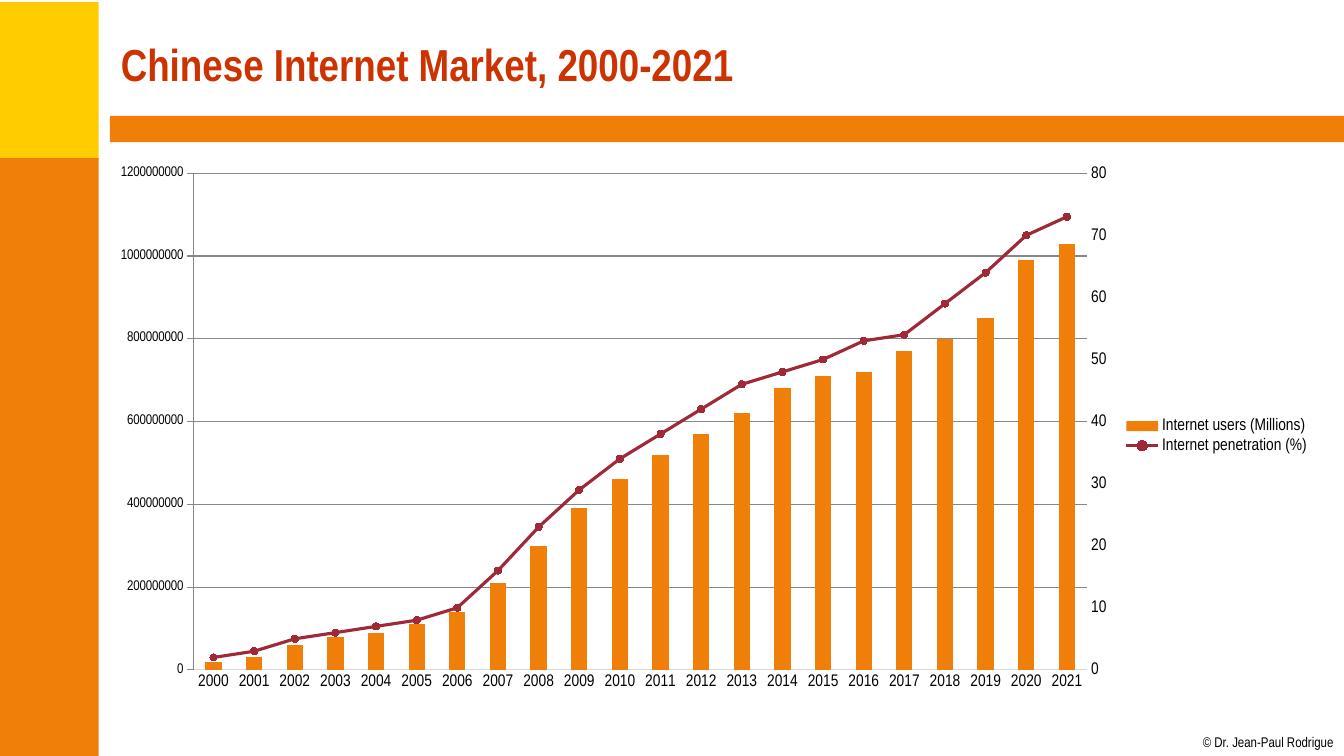
from pptx import Presentation
from pptx.chart.axis import ValueAxis
from pptx.chart.data import CategoryChartData
from pptx.dml.color import RGBColor
from pptx.enum.chart import XL_CHART_TYPE, XL_LEGEND_POSITION, XL_MARKER_STYLE, XL_TICK_MARK
from pptx.enum.shapes import MSO_SHAPE
from pptx.enum.text import MSO_ANCHOR
from pptx.oxml import parse_xml
from pptx.oxml.ns import nsdecls
from pptx.util import Inches, Pt

FONT = "Arial Narrow"
YELLOW = RGBColor(0xFF, 0xCC, 0x00)
ORANGE = RGBColor(0xF0, 0x7F, 0x09)
RED = RGBColor(0xCC, 0x33, 0x00)
MAROON = RGBColor(0x9F, 0x29, 0x36)
GREY = RGBColor(0xD9, 0xD9, 0xD9)
BLACK = RGBColor(0, 0, 0)

YEARS = [str(year) for year in range(2000, 2022)]
MILLION = 1_000_000
USERS_IN_MILLIONS = [20, 30, 60, 80, 90, 110, 140, 210, 300, 390, 460,
                     520, 570, 620, 680, 710, 720, 770, 800, 850, 990, 1030]
PENETRATION = [2, 3, 5, 6, 7, 8, 10, 16, 23, 29, 34,
               38, 42, 46, 48, 50, 53, 54, 59, 64, 70, 73]
PLOT_AREA = {"x": 0.068, "y": 0.05, "w": 0.739, "h": 0.851}


def set_font(font, size, color=BLACK, bold=False):
    font.name = FONT
    font.size = Pt(size)
    font.color.rgb = color
    font.bold = bold


def add_block(slide, left, top, width, height, color):
    shape = slide.shapes.add_shape(
        MSO_SHAPE.RECTANGLE, Inches(left), Inches(top), Inches(width), Inches(height))
    shape.shadow.inherit = False
    shape.fill.solid()
    shape.fill.fore_color.rgb = color
    shape.line.fill.background()


def add_text(slide, left, top, width, height, text, size, color=BLACK, bold=False):
    box = slide.shapes.add_textbox(
        Inches(left), Inches(top), Inches(width), Inches(height))
    frame = box.text_frame
    frame.text = text
    set_font(frame.paragraphs[0].font, size, color, bold)
    return frame


def move_to_right_axis(chart):
    """Turn the second bar series into a line on its own right-hand axis."""
    plot_area = chart.element.xpath("c:chart/c:plotArea")[0]
    bars = plot_area.xpath("c:barChart")[0]
    series = bars.xpath("c:ser")[1]
    for flag in series.xpath("c:invertIfNegative"):
        series.remove(flag)
    line_chart = parse_xml(
        f'<c:lineChart {nsdecls("c")}><c:grouping val="standard"/><c:varyColors val="0"/>'
        '<c:marker val="1"/><c:axId val="5001"/><c:axId val="5002"/></c:lineChart>')
    line_chart.insert(2, series)
    bars.addnext(line_chart)
    category_axis = parse_xml(
        f'<c:catAx {nsdecls("c")}><c:axId val="5001"/>'
        '<c:scaling><c:orientation val="minMax"/></c:scaling><c:delete val="1"/>'
        '<c:axPos val="b"/><c:crossAx val="5002"/><c:crosses val="autoZero"/></c:catAx>')
    value_axis = parse_xml(
        f'<c:valAx {nsdecls("c")}><c:axId val="5002"/>'
        '<c:scaling><c:orientation val="minMax"/></c:scaling><c:delete val="0"/>'
        '<c:axPos val="r"/><c:tickLblPos val="nextTo"/>'
        '<c:crossAx val="5001"/><c:crosses val="max"/></c:valAx>')
    plot_area.xpath("c:valAx")[0].addnext(value_axis)
    value_axis.addnext(category_axis)
    return ValueAxis(value_axis)


def place_plot_area(chart):
    plot_area = chart.element.xpath("c:chart/c:plotArea")[0]
    for layout in plot_area.xpath("c:layout"):
        plot_area.remove(layout)
    sizes = "".join(f'<c:{key} val="{value}"/>' for key, value in PLOT_AREA.items())
    plot_area.insert(0, parse_xml(
        f'<c:layout {nsdecls("c")}><c:manualLayout><c:layoutTarget val="inner"/>'
        f'<c:xMode val="edge"/><c:yMode val="edge"/>{sizes}</c:manualLayout></c:layout>'))


def style_axis(axis):
    axis.major_tick_mark = XL_TICK_MARK.NONE
    axis.minor_tick_mark = XL_TICK_MARK.NONE
    set_font(axis.tick_labels.font, 12)


def style_value_axis(axis, maximum, step, number_format):
    style_axis(axis)
    axis.minimum_scale = 0
    axis.maximum_scale = maximum
    axis.major_unit = step
    axis.tick_labels.number_format = number_format
    axis.tick_labels.number_format_is_linked = False
    axis.format.line.fill.background()


def style_thin_line(line):
    line.color.rgb = GREY
    line.width = Pt(0.75)


def add_internet_chart(slide):
    data = CategoryChartData()
    data.categories = YEARS
    data.add_series("Internet users (Millions)",
                    [users * MILLION for users in USERS_IN_MILLIONS])
    data.add_series("Internet penetration (%)", PENETRATION)
    chart = slide.shapes.add_chart(
        XL_CHART_TYPE.COLUMN_CLUSTERED, Inches(1.1), Inches(1.43),
        Inches(12), Inches(5.79), data).chart
    chart.has_title = False
    set_font(chart.font, 10)

    right_axis = move_to_right_axis(chart)
    place_plot_area(chart)
    style_axis(chart.category_axis)
    style_thin_line(chart.category_axis.format.line)
    style_value_axis(chart.value_axis, 1200 * MILLION, 200 * MILLION, "#,##0")
    style_value_axis(right_axis, 80, 10, "0")
    chart.value_axis.has_major_gridlines = True
    style_thin_line(chart.value_axis.major_gridlines.format.line)

    bars, line_plot = chart.plots
    bars.gap_width = 150
    bars.vary_by_categories = False
    users = bars.series[0]
    users.format.fill.solid()
    users.format.fill.fore_color.rgb = ORANGE

    penetration = line_plot.series[0]
    penetration.smooth = False
    penetration.format.line.color.rgb = MAROON
    penetration.format.line.width = Pt(2.25)
    marker = penetration.marker
    marker.style = XL_MARKER_STYLE.CIRCLE
    marker.size = 5
    marker.format.fill.solid()
    marker.format.fill.fore_color.rgb = MAROON
    marker.format.line.color.rgb = MAROON

    chart.has_legend = True
    chart.legend.position = XL_LEGEND_POSITION.RIGHT
    chart.legend.include_in_layout = False
    set_font(chart.legend.font, 12)


def main():
    presentation = Presentation()
    presentation.slide_width = Inches(13.33)
    presentation.slide_height = Inches(7.5)
    slide = presentation.slides.add_slide(presentation.slide_layouts[6])

    add_block(slide, -0.02, 0.02, 1, 1.58, YELLOW)
    add_block(slide, -0.02, 1.57, 1, 5.93, ORANGE)
    add_block(slide, 1.09, 1.15, 12.24, 0.26, ORANGE)

    credit = add_text(slide, 11.93, 7.28, 1.31, 0.17, "© Dr. Jean-Paul Rodrigue", 10)
    credit.margin_left = credit.margin_right = 0
    credit.margin_top = credit.margin_bottom = 0
    credit.word_wrap = False

    title = add_text(slide, 1.1, 0.11, 12, 1.04,
                     "Chinese Internet Market, 2000-2021", 32, RED, bold=True)
    title.word_wrap = True
    title.vertical_anchor = MSO_ANCHOR.MIDDLE

    add_internet_chart(slide)
    presentation.save("out.pptx")


if __name__ == "__main__":
    main()
